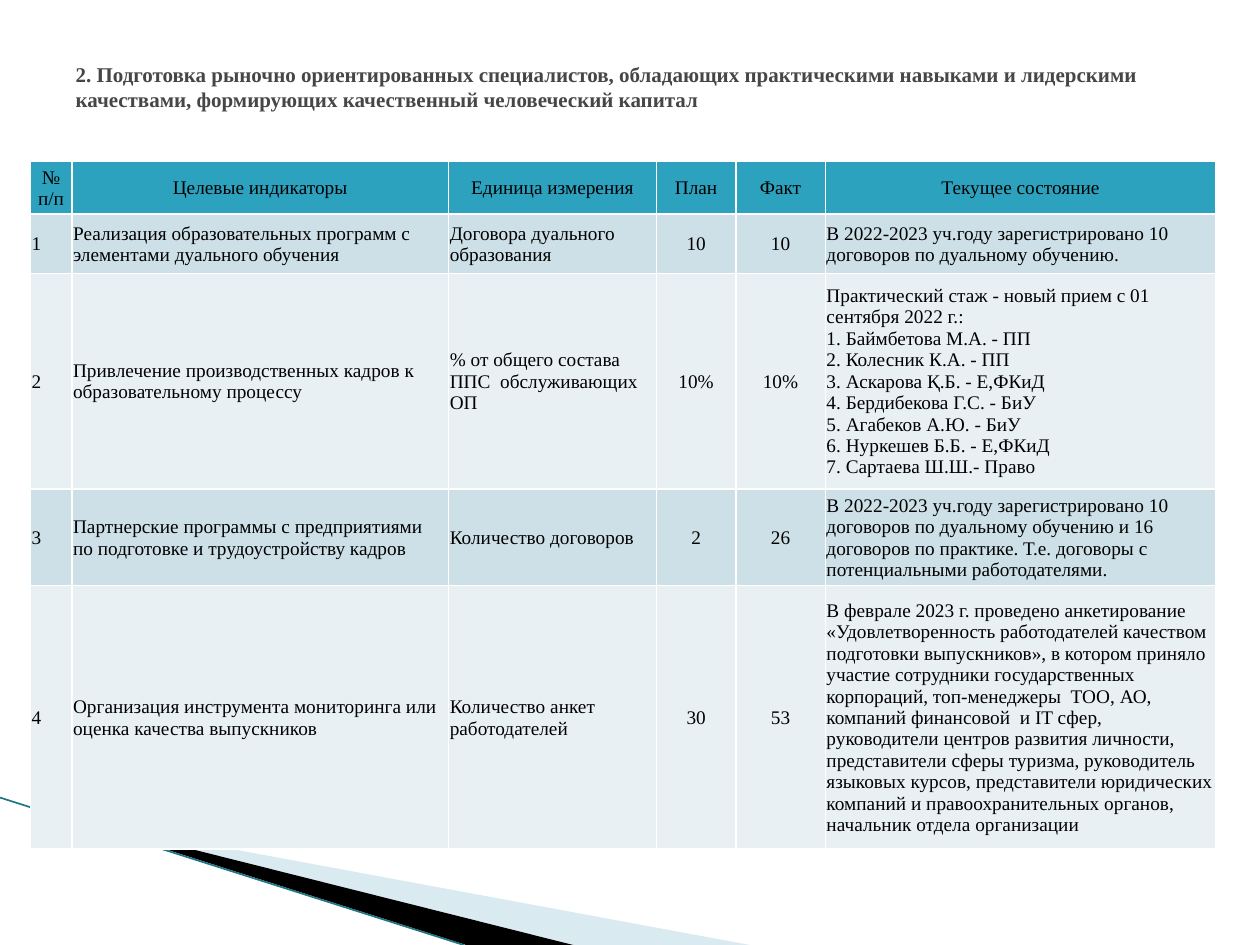
import pptx
import pptx.util
import pptx.dml.color
import pptx.enum.shapes
import pptx.enum.text
import pptx.oxml.ns
import lxml.etree

Inches = pptx.util.Inches
ALIGN = pptx.enum.text.PP_ALIGN
MIDDLE = pptx.enum.text.MSO_ANCHOR.MIDDLE

TITLE = ("2. Подготовка рыночно ориентированных специалистов, обладающих практическими навыками "
         "и лидерскими качествами, формирующих качественный человеческий капитал")
COLS = [0.33, 2.99, 1.65, 0.63, 0.71, 3.1]
ROWS = [0.42, 0.47, 1.71, 0.77, 2.09]
CENTERED = (3, 4)
BANDS = ["E8F0F4", "CDE0E8"]
DATA = [
    ["№ п/п", "Целевые индикаторы", "Единица измерения", "План", "Факт", "Текущее состояние"],
    ["1", "Реализация образовательных программ с элементами дуального обучения",
     "Договора дуального образования", "10", "10",
     "В 2022-2023 уч.году зарегистрировано 10 договоров по дуальному обучению."],
    ["2", "Привлечение производственных кадров к образовательному процессу",
     "% от общего состава ППС  обслуживающих ОП", "10%", "10%",
     "Практический стаж - новый прием с 01 сентября 2022 г.:\n"
     "1. Баймбетова М.А. - ПП\n"
     "2. Колесник К.А. - ПП\n"
     "3. Аскарова Қ.Б. - Е,ФКиД\n"
     "4. Бердибекова Г.С. - БиУ\n"
     "5. Агабеков А.Ю. - БиУ\n"
     "6. Нуркешев Б.Б. - Е,ФКиД\n"
     "7. Сартаева Ш.Ш.- Право"],
    ["3", "Партнерские программы с предприятиями по подготовке и трудоустройству кадров",
     "Количество договоров", "2", "26",
     "В 2022-2023 уч.году зарегистрировано 10 договоров по дуальному обучению и 16 договоров "
     "по практике. Т.е. договоры с потенциальными работодателями."],
    ["4", "Организация инструмента мониторинга или оценка качества выпускников",
     "Количество анкет работодателей", "30", "53",
     "В феврале 2023 г. проведено анкетирование «Удовлетворенность работодателей качеством "
     "подготовки выпускников», в котором приняло участие сотрудники государственных корпораций, "
     "топ-менеджеры  ТОО, АО, компаний финансовой  и IT сфер, руководители центров развития "
     "личности, представители сферы туризма, руководитель языковых курсов, представители "
     "юридических компаний и правоохранительных органов, начальник отдела организации"],
]


def rgb(value):
    return pptx.dml.color.RGBColor.from_string(value)


def write(tf, text, size=11, color="000000", bold=False, align=ALIGN.LEFT):
    tf.text = text
    for p in tf.paragraphs:
        p.alignment = align
        for r in p.runs:
            r.font.name = "Times New Roman"
            r.font.size = pptx.util.Pt(size)
            r.font.bold = bold
            r.font.color.rgb = rgb(color)


def add_wedge(s, points, color, alpha=None):
    start, *rest = [(Inches(x), Inches(y)) for x, y in points]
    builder = s.shapes.build_freeform(*start)
    builder.add_line_segments(rest, close=True)
    sp = builder.convert_to_shape()
    sp.shadow.inherit = False
    sp.fill.solid()
    sp.fill.fore_color.rgb = rgb(color)
    sp.line.fill.background()
    if alpha:
        clr = sp._element.spPr.find(".//" + pptx.oxml.ns.qn("a:srgbClr"))
        lxml.etree.SubElement(clr, pptx.oxml.ns.qn("a:alpha"), val=str(alpha * 1000))


def add_line(s, x1, y1, x2, y2, color, width):
    line = s.shapes.add_connector(pptx.enum.shapes.MSO_CONNECTOR.STRAIGHT,
                                  Inches(x1), Inches(y1), Inches(x2), Inches(y2))
    line.line.color.rgb = rgb(color)
    line.line.width = pptx.util.Pt(width)
    lxml.etree.SubElement(line._element.spPr, pptx.oxml.ns.qn("a:effectLst"))


def add_title(s, text):
    sp = s.shapes.title
    sp.left, sp.top, sp.width, sp.height = Inches(0.5), Inches(0.3), Inches(9), Inches(0.77)
    tf = sp.text_frame
    tf.word_wrap = True
    tf.vertical_anchor = MIDDLE
    write(tf, text, size=12, color="464646", bold=True)


def add_indicators(s):
    table = s.shapes.add_table(len(ROWS), len(COLS), Inches(0.24), Inches(1.28),
                               Inches(sum(COLS)), Inches(sum(ROWS))).table
    for column, width in zip(table.columns, COLS):
        column.width = Inches(width)
    for i, (row, height) in enumerate(zip(table.rows, ROWS)):
        row.height = Inches(height)
        for j, cell in enumerate(row.cells):
            cell.margin_left = cell.margin_top = cell.margin_right = Inches(0.01)
            cell.margin_bottom = 0
            cell.vertical_anchor = MIDDLE
            cell.fill.solid()
            cell.fill.fore_color.rgb = rgb(BANDS[i % 2] if i else "2DA2BF")
            centered = i == 0 or j in CENTERED
            write(cell.text_frame, DATA[i][j], align=ALIGN.CENTER if centered else ALIGN.LEFT)


def main():
    prs = pptx.Presentation()
    prs.slide_width, prs.slide_height = Inches(10), Inches(7.5)
    s = prs.slides.add_slide(prs.slide_layouts[5])
    add_wedge(s, [(0.55, 6.5), (5.95, 7.5), (4.56, 7.5)], "A0CBDC", alpha=40)
    add_wedge(s, [(0.53, 6.49), (4.55, 7.5), (3.7, 7.5)], "000000")
    add_line(s, 0, 6.33, 3.68, 7.5, "1F7486", 0.95)
    add_indicators(s)
    add_title(s, TITLE)
    prs.save("out.pptx")


if __name__ == "__main__":
    main()
